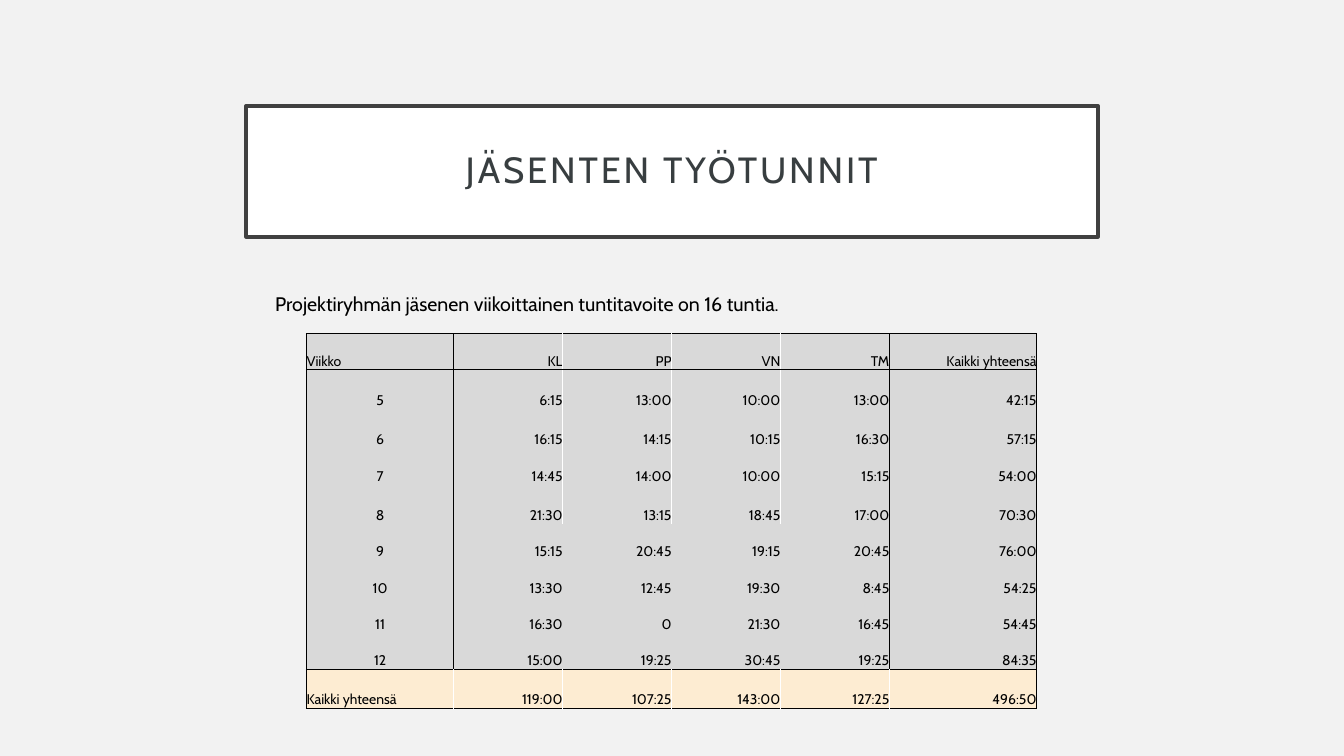
from dataclasses import dataclass
from typing import Any, Optional

from lxml import etree
from pptx import Presentation
from pptx import util as u
from pptx.dml.color import RGBColor
from pptx.enum import text as t
from pptx.oxml import ns

FONT = "Cabin"
BLACK, WHITE, GREY, CREAM = "000000", "FFFFFF", "D9D9D9", "FDECD2"

# Table contents
HOURS = [
    ["Viikko", "KL", "PP", "VN", "TM", "Kaikki yhteensä"],
    ["5", "6:15", "13:00", "10:00", "13:00", "42:15"],
    ["6", "16:15", "14:15", "10:15", "16:30", "57:15"],
    ["7", "14:45", "14:00", "10:00", "15:15", "54:00"],
    ["8", "21:30", "13:15", "18:45", "17:00", "70:30"],
    ["9", "15:15", "20:45", "19:15", "20:45", "76:00"],
    ["10", "13:30", "12:45", "19:30", "8:45", "54:25"],
    ["11", "16:30", "0", "21:30", "16:45", "54:45"],
    ["12", "15:00", "19:25", "30:45", "19:25", "84:35"],
    ["Kaikki yhteensä", "119:00", "107:25", "143:00", "127:25", "496:50"],
]
COLUMN_WIDTHS = [1.46, 1.08, 1.08, 1.08, 1.08, 1.46]
ROW_HEIGHTS = [0.36, 0.39, 0.39, 0.36, 0.39, 0.36, 0.36, 0.36, 0.36, 0.39]
TOTAL_ROW = len(HOURS) - 1
LAST_COLUMN = len(COLUMN_WIDTHS) - 1


@dataclass
class Label:
    text: str
    size: float
    colour: str = BLACK
    align: t.PP_ALIGN = t.PP_ALIGN.LEFT


def rgb(colour: str) -> RGBColor:
    return RGBColor.from_string(colour)


def apply(target: Any, values: dict[str, Any]) -> None:
    for name, value in values.items():
        setattr(target, name, value)


def write(frame: Any, label: Label) -> Any:
    para = frame.paragraphs[0]
    para.alignment = label.align
    span = para.add_run()
    span.text = label.text
    apply(span.font, {"name": FONT, "size": u.Pt(label.size)})
    span.font.color.rgb = rgb(label.colour)
    return span


def add_border(cell: Any, side: str, colour: Optional[str]) -> None:
    line = etree.SubElement(cell._tc.get_or_add_tcPr(), ns.qn(f"a:ln{side}"), w=str(u.Pt(1)))
    if colour is None:
        etree.SubElement(line, ns.qn("a:noFill"))
    else:
        fill = etree.SubElement(line, ns.qn("a:solidFill"))
        etree.SubElement(fill, ns.qn("a:srgbClr"), val=colour)


def vertical_colour(row: int, edge: int) -> Optional[str]:
    """Colour of the column edge, counted from the left side of the table."""
    if edge in (0, LAST_COLUMN + 1):
        return BLACK
    if row == TOTAL_ROW:
        return WHITE
    if edge in (1, LAST_COLUMN):
        return BLACK
    return WHITE if row < 5 else None


def horizontal_colour(edge: int) -> Optional[str]:
    return BLACK if edge in (0, 1, TOTAL_ROW, TOTAL_ROW + 1) else None


def cell_align(row: int, column: int) -> t.PP_ALIGN:
    if column > 0:
        return t.PP_ALIGN.RIGHT
    return t.PP_ALIGN.LEFT if row in (0, TOTAL_ROW) else t.PP_ALIGN.CENTER


def fill_cell(cell: Any, row: int, column: int) -> None:
    margins = dict.fromkeys(["margin_left", "margin_right", "margin_top", "margin_bottom"], 0)
    apply(cell, {**margins, "vertical_anchor": t.MSO_ANCHOR.BOTTOM})
    add_border(cell, "L", vertical_colour(row, column))
    add_border(cell, "R", vertical_colour(row, column + 1))
    add_border(cell, "T", horizontal_colour(row))
    add_border(cell, "B", horizontal_colour(row + 1))
    cell.fill.solid()
    cell.fill.fore_color.rgb = rgb(CREAM if row == TOTAL_ROW else GREY)
    write(cell.text_frame, Label(HOURS[row][column], 10, align=cell_align(row, column)))


def add_title(page: Any) -> None:
    box = page.shapes.title
    apply(box, {"left": u.Inches(2.44), "top": u.Inches(1.05),
                "width": u.Inches(8.45), "height": u.Inches(1.3)})
    box.fill.solid()
    box.fill.fore_color.rgb = rgb(WHITE)
    box.line.color.rgb = rgb("404040")
    box.line.width = u.Pt(2.5)
    frame = box.text_frame
    margins = dict.fromkeys(["margin_left", "margin_right", "margin_top", "margin_bottom"],
                            u.Inches(0.2))
    apply(frame, {**margins, "word_wrap": True, "auto_size": t.MSO_AUTO_SIZE.NONE,
                  "vertical_anchor": t.MSO_ANCHOR.MIDDLE})
    span = write(frame, Label("JÄSENTEN TYÖTUNNIT", 26, "383E40", t.PP_ALIGN.CENTER))
    span.font._element.set("spc", "200")
    frame.paragraphs[0].line_spacing = 0.9


def add_goal(page: Any) -> None:
    box = page.shapes.add_textbox(u.Inches(2.63), u.Inches(2.85), u.Inches(7.59), u.Inches(0.34))
    apply(box.text_frame, {"word_wrap": True, "auto_size": t.MSO_AUTO_SIZE.SHAPE_TO_FIT_TEXT})
    write(box.text_frame,
          Label("Projektiryhmän jäsenen viikoittainen tuntitavoite on 16 tuntia.", 14))


def add_hours(page: Any) -> None:
    table = page.shapes.add_table(
        len(HOURS), len(COLUMN_WIDTHS), u.Inches(3.04), u.Inches(3.31),
        u.Inches(sum(COLUMN_WIDTHS)), u.Inches(sum(ROW_HEIGHTS))).table
    apply(table, {"first_row": False, "horz_banding": False})
    for column, width in zip(table.columns, COLUMN_WIDTHS):
        column.width = u.Inches(width)
    for row, height in zip(table.rows, ROW_HEIGHTS):
        row.height = u.Inches(height)
    for row in range(len(HOURS)):
        for column in range(len(COLUMN_WIDTHS)):
            fill_cell(table.cell(row, column), row, column)


def main() -> None:
    deck = Presentation()
    apply(deck, {"slide_width": u.Inches(13.33), "slide_height": u.Inches(7.5)})
    page = deck.slides.add_slide(deck.slide_layouts.get_by_name("Title Only"))
    page.background.fill.solid()
    page.background.fill.fore_color.rgb = rgb("F2F2F2")

    add_title(page)
    add_goal(page)
    add_hours(page)
    deck.save("out.pptx")


if __name__ == "__main__":
    main()
